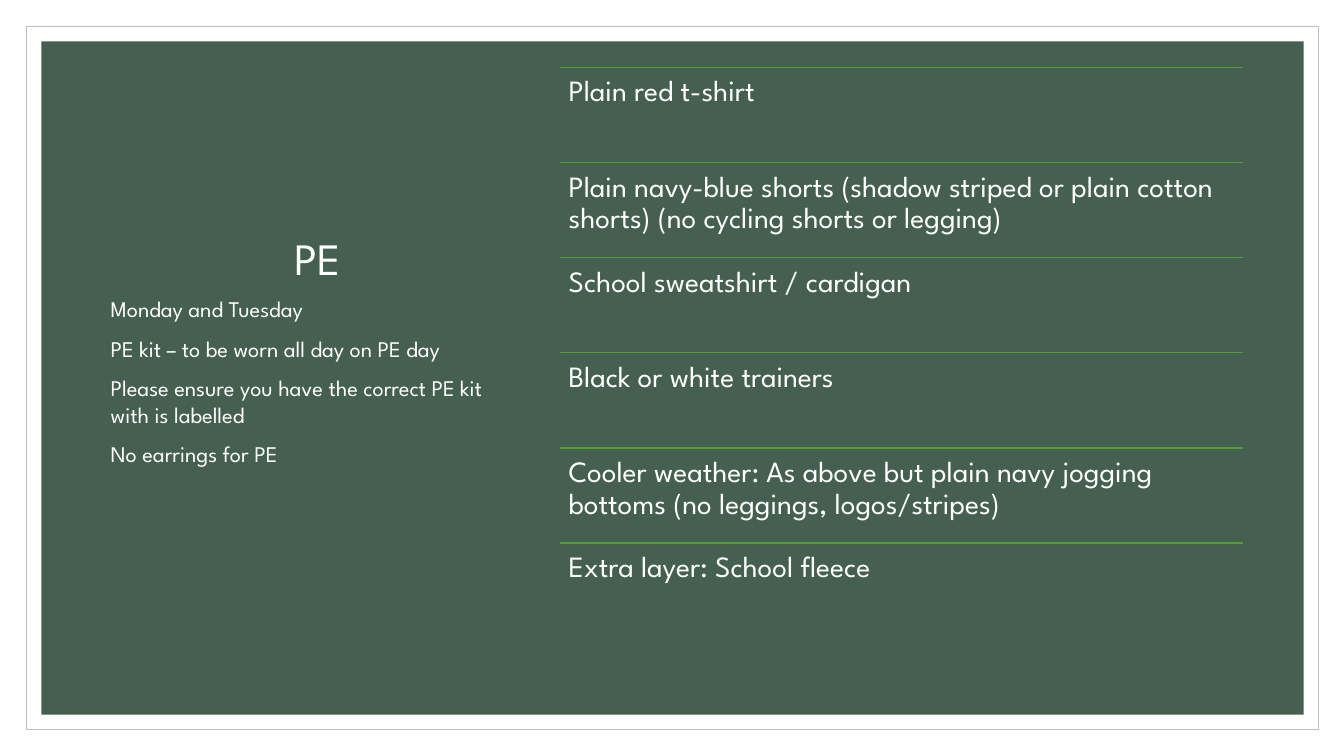
from lxml import etree
from pptx import Presentation
from pptx.dml.color import RGBColor
from pptx.enum.shapes import MSO_CONNECTOR, MSO_SHAPE
from pptx.enum.text import MSO_ANCHOR, PP_ALIGN
from pptx.oxml.ns import qn
from pptx.util import Inches, Pt

RECTANGLE = MSO_SHAPE.RECTANGLE
STRAIGHT = MSO_CONNECTOR.STRAIGHT
TOP, BOTTOM = MSO_ANCHOR.TOP, MSO_ANCHOR.BOTTOM
LEFT, CENTER = PP_ALIGN.LEFT, PP_ALIGN.CENTER

WHITE = RGBColor(0xFF, 0xFF, 0xFF)
FRAME_GREY = RGBColor(0xBF, 0xBF, 0xBF)
DARK_GREEN = RGBColor(0x45, 0x5F, 0x51)
RULE_GREEN = RGBColor(0x54, 0x9E, 0x39)

NOTES = [
    "Monday and Tuesday",
    "PE kit – to be worn all day on PE day",
    "Please ensure you have the correct PE kit with is labelled",
    "No earrings for PE",
]
KIT = [
    "Plain red t-shirt",
    "Plain navy-blue shorts (shadow striped or plain cotton shorts) (no cycling shorts or legging)",
    "School sweatshirt / cardigan",
    "Black or white trainers",
    "Cooler weather: As above but plain navy jogging bottoms (no leggings, logos/stripes)",
    "Extra layer: School fleece",
]
KIT_LEFT, KIT_TOP, KIT_WIDTH, KIT_HEIGHT = 5.55, 0.67, 6.78, 5.66


class KitSlide:
    font = "League Spartan"
    text_color = WHITE

    def __init__(self, slide):
        self.slide = slide

    def panel(self, box, fill, outline=None):
        panel = self.slide.shapes.add_shape(RECTANGLE, *map(Inches, box))
        panel.shadow.inherit = False
        panel.fill.solid()
        panel.fill.fore_color.rgb = fill
        if outline is None:
            panel.line.fill.background()
        else:
            panel.line.color.rgb = outline
            panel.line.width = Pt(0.5)

    def rule(self, left, top, width):
        ends = map(Inches, (left, top, left + width, top))
        rule = self.slide.shapes.add_connector(STRAIGHT, *ends)
        rule.line.color.rgb = RULE_GREEN
        rule.line.width = Pt(1)
        etree.SubElement(rule._element.spPr, qn("a:effectLst"))

    def text(self, box, lines, size, anchor=TOP, inset=None, **paragraph_format):
        frame = self.slide.shapes.add_textbox(*map(Inches, box)).text_frame
        frame.word_wrap = True
        frame.vertical_anchor = anchor
        if inset is not None:
            for side in ("left", "top", "right", "bottom"):
                setattr(frame, f"margin_{side}", Inches(inset))
        frame.text = "\n".join(lines)
        for paragraph in frame.paragraphs:
            for name, value in paragraph_format.items():
                setattr(paragraph, name, value)
            paragraph.font.name = self.font
            paragraph.font.size = Pt(size)
            paragraph.font.color.rgb = self.text_color


def main():
    deck = Presentation()
    deck.slide_width, deck.slide_height = Inches(13.33), Inches(7.5)
    page = KitSlide(deck.slides.add_slide(deck.slide_layouts[6]))

    page.panel((0.26, 0.26, 12.82, 6.98), WHITE, FRAME_GREY)
    page.panel((0.41, 0.41, 12.52, 6.68), DARK_GREEN)
    page.text((1, 0.67, 4.3, 2.21), ["PE"], 32, BOTTOM,
              alignment=CENTER, line_spacing=0.9)

    row_height = KIT_HEIGHT / len(KIT)
    for row, item in enumerate(KIT):
        top = KIT_TOP + row * row_height
        page.rule(KIT_LEFT, top, KIT_WIDTH)
        page.text((KIT_LEFT, top, KIT_WIDTH, row_height), [item], 21,
                  inset=0.09, alignment=LEFT, line_spacing=0.9)

    page.text((1, 2.88, 4.3, 3.45), NOTES, 16,
              alignment=LEFT, space_before=Pt(9))
    deck.save("out.pptx")


if __name__ == "__main__":
    main()
